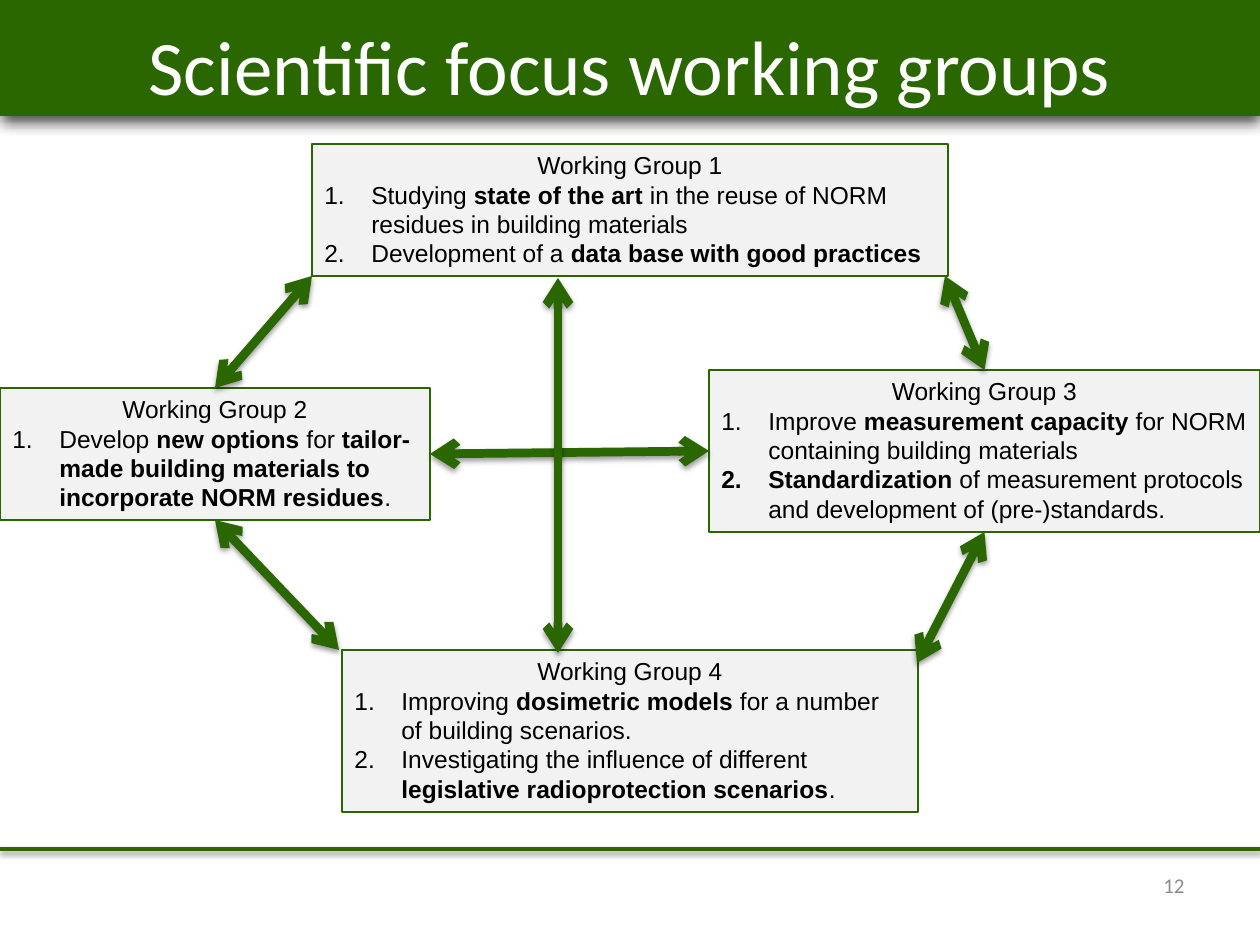
from lxml import etree
from pptx import Presentation, util as u
from pptx.dml.color import RGBColor
from pptx.enum import shapes, text
from pptx.oxml import parse_xml
from pptx.oxml.ns import nsdecls, qn

PX = 7257  # EMU in one px, 126 px to the inch
GREEN = RGBColor(0x2B, 0x67, 0x00)
PALE = RGBColor(0xF2, 0xF2, 0xF2)
GREY = RGBColor(0x8C, 0x8C, 0x8C)
BLACK = RGBColor(0, 0, 0)
WHITE = RGBColor(255, 255, 255)
LEFT, CENTER, RIGHT = text.PP_ALIGN.LEFT, text.PP_ALIGN.CENTER, text.PP_ALIGN.RIGHT
TOP, MIDDLE = text.MSO_ANCHOR.TOP, text.MSO_ANCHOR.MIDDLE


def write(sp, lines, size=14, font="Arial", color=BLACK, align=CENTER, anchor=TOP):
    """Write a heading line, then numbered lines; *stars* enclose bold text."""
    tf = sp.text_frame
    tf.word_wrap = True
    tf.vertical_anchor = anchor
    for i, line in enumerate(lines):
        p = tf.add_paragraph() if i else tf.paragraphs[0]
        p.alignment = LEFT if i else align
        if i:
            pPr = p._p.get_or_add_pPr()
            pPr.set("marL", str(47 * PX))
            pPr.set("indent", str(-47 * PX))
            etree.SubElement(pPr, qn("a:buFont")).set("typeface", "+mj-lt")
            etree.SubElement(pPr, qn("a:buAutoNum")).set("type", "arabicPeriod")
        for j, part in enumerate(line.split("*")):
            if part:
                r = p.add_run()
                r.text = part
                r.font.name, r.font.size = font, u.Pt(size)
                r.font.color.rgb = color
                r.font.bold = j % 2 == 1


def cast_shadow(sp, blur=3.1, dist=1.6, alpha=38):
    """Give a shape or connector a black shadow that falls straight down."""
    sp._element.spPr.append(parse_xml(
        f'<a:effectLst {nsdecls("a")}><a:outerShdw blurRad="{u.Pt(blur)}" '
        f'dist="{u.Pt(dist)}" dir="5400000" rotWithShape="0"><a:srgbClr val="000000">'
        f'<a:alpha val="{alpha * 1000}"/></a:srgbClr></a:outerShdw></a:effectLst>'))


prs = Presentation()
prs.slide_width, prs.slide_height = 1260 * PX, 945 * PX
s = prs.slides.add_slide(prs.slide_layouts[5])

# Title band, footer rule and page number
band = s.shapes.add_shape(shapes.MSO_SHAPE.RECTANGLE, 0, 0, 1260 * PX, 116 * PX)
band.fill.solid()
band.fill.fore_color.rgb = GREEN
band.line.fill.background()
cast_shadow(band, blur=8, dist=3, alpha=72)

title = s.shapes.title
title.left, title.top, title.width, title.height = 63 * PX, 0, 1134 * PX, 130 * PX
write(title, ["Scientific focus working groups"], size=44, font="Calibri",
      color=WHITE, anchor=MIDDLE)
title.element.addprevious(band.element)

rule = s.shapes.add_connector(shapes.MSO_CONNECTOR.STRAIGHT,
                              0, 849 * PX, 1260 * PX, 849 * PX)
rule.line.color.rgb = GREEN
rule.line.width = u.Pt(2)
cast_shadow(rule)

number = s.shapes.add_textbox(903 * PX, 860 * PX, 294 * PX, 50 * PX)
write(number, ["12"], size=12, font="Calibri", color=GREY, align=RIGHT, anchor=MIDDLE)

# Working groups: left, top, width, height, numbered tasks
GROUPS = [
    (312, 144, 636, 132, [
        "Studying *state of the art *in the reuse of NORM residues in building materials",
        "Development of a *data base with good practices*"]),
    (0, 388, 430, 132, [
        "Develop *new options *for *tailor-made building materials to "
        "incorporate NORM residues*."]),
    (709, 370, 551, 162, [
        "Improve *measurement capacity *for NORM containing building materials",
        "*Standardization* of measurement protocols and development of (pre-)standards."]),
    (342, 650, 576, 162, [
        "Improving *dosimetric models *for a number of building scenarios.",
        "Investigating the influence of different *legislative radioprotection scenarios*."]),
]
boxes = {}
for n, (x, y, w, h, tasks) in enumerate(GROUPS, start=1):
    sp = s.shapes.add_shape(shapes.MSO_SHAPE.RECTANGLE, x * PX, y * PX, w * PX, h * PX)
    sp.shadow.inherit = False
    sp.fill.solid()
    sp.fill.fore_color.rgb = PALE
    sp.line.color.rgb = GREEN
    sp.line.width = u.Pt(0.75)
    write(sp, [f"Working Group {n}"] + tasks)
    boxes[n] = sp

# Arrows: x1, y1, x2, y2, then the (group, side) joined at each end
ARROWS = [
    (215, 388, 312, 276, (2, 0), None),
    (430, 454, 709, 451, (2, 3), (3, 1)),
    (945, 276, 984, 370, None, (3, 0)),
    (215, 520, 339, 650, (2, 2), None),
    (917, 663, 984, 532, None, (3, 2)),
    (558, 653, 558, 278, None, None),
]
for x1, y1, x2, y2, begin, end in ARROWS:
    c = s.shapes.add_connector(shapes.MSO_CONNECTOR.STRAIGHT,
                               x1 * PX, y1 * PX, x2 * PX, y2 * PX)
    if begin:
        c.begin_connect(boxes[begin[0]], begin[1])
    if end:
        c.end_connect(boxes[end[0]], end[1])
    c.line.color.rgb = GREEN
    c.line.width = u.Pt(5)
    for tag in ("a:headEnd", "a:tailEnd"):
        etree.SubElement(c.line._get_or_add_ln(), qn(tag)).set("type", "arrow")
    cast_shadow(c)

prs.save("out.pptx")
